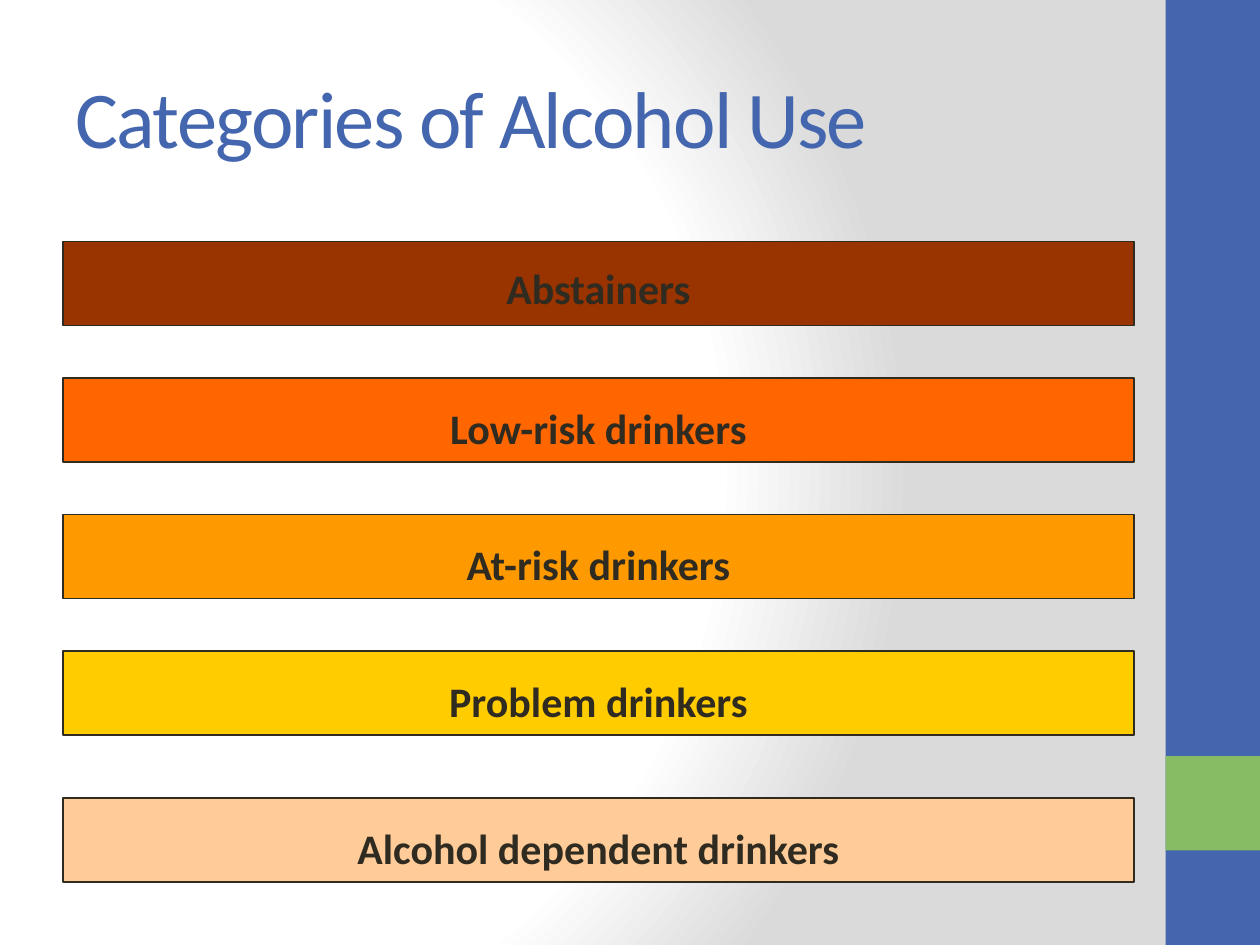
from lxml.etree import SubElement
from pptx import Presentation
from pptx.dml.color import RGBColor
from pptx.enum.shapes import MSO_SHAPE
from pptx.enum.text import MSO_ANCHOR, PP_ALIGN
from pptx.oxml.ns import qn
from pptx.util import Inches, Pt

HUES = {
    "blue": "4466AF", "green": "88BC64", "ink": "2F2B20",
    "white": "FFFFFF", "grey": "DADADA",
    "brown": "993300", "orange": "FF6600", "amber": "FF9900",
    "gold": "FFCC00", "peach": "FFCC99",
}
TITLE = {"name": "Calibri", "size": Pt(46), "bold": False}
LABEL = {"name": "Calibri", "size": Pt(24), "bold": True}
COLS, ROWS = 40, 90  # quarter-inch columns, twelfth-inch rows


class Page:
    def __init__(self, deck):
        self.slide = deck.slides.add_slide(deck.slide_layouts[5])
        self.col = deck.slide_width / COLS
        self.row = deck.slide_height / ROWS

    def hue(self, name):
        return RGBColor.from_string(HUES[name])

    def area(self, x, y, w, h):
        return [round(n) for n in
                (x * self.col, y * self.row, w * self.col, h * self.row)]

    def style(self, run, form, hue):
        for key, value in form.items():
            setattr(run.font, key, value)
        run.font.color.rgb = self.hue(hue)

    def label(self, frame, text, form, hue, align):
        frame.word_wrap = True
        frame.vertical_anchor = MSO_ANCHOR.MIDDLE
        para = frame.paragraphs[0]
        para.alignment = align
        run = para.add_run()
        run.text = text
        self.style(run, form, hue)
        return run

    def backdrop(self, stops, focus):
        fill = self.slide.background.fill
        fill.gradient()
        grad = self.slide.element.find(".//" + qn("a:gradFill"))
        for child in list(grad):
            grad.remove(child)
        group = SubElement(grad, qn("a:gsLst"))
        for place, hue in stops:
            stop = SubElement(group, qn("a:gs"), pos=str(place * 1000))
            SubElement(stop, qn("a:srgbClr"), val=HUES[hue])
        ring = SubElement(grad, qn("a:path"))
        ring.set("path", "circle")
        SubElement(ring, qn("a:fillToRect"),
                   {side: str(n * 1000) for side, n in focus.items()})

    def block(self, area, hue, edge=None):
        box = self.slide.shapes.add_shape(MSO_SHAPE.RECTANGLE, *self.area(*area))
        box.shadow.inherit = False
        box.fill.solid()
        box.fill.fore_color.rgb = self.hue(hue)
        if edge:
            box.line.color.rgb = self.hue(edge)
            box.line.width = Pt(0.75)
        else:
            box.line.fill.background()
        return box

    def bar(self, area, hue, text, drop):
        frame = self.block(area, hue, "ink").text_frame
        frame.margin_top, frame.margin_bottom = Inches(drop), 0
        self.label(frame, text, LABEL, "ink", PP_ALIGN.CENTER)

    def title(self, area, text):
        head = self.slide.shapes.title
        head.left, head.top, head.width, head.height = self.area(*area)
        run = self.label(head.text_frame, text, TITLE, "blue", PP_ALIGN.LEFT)
        run._r.get_or_add_rPr().set("spc", "-100")


def main():
    deck = Presentation()
    deck.slide_width, deck.slide_height = Inches(10), Inches(7.5)
    page = Page(deck)

    # Background and side band
    page.backdrop([(0, "white"), (75, "white"), (100, "grey")],
                  {"l": 20, "t": 50, "r": 100, "b": 50})
    page.block((37, 0, 3, ROWS), "blue")
    page.block((37, 72, 3, 9), "green")

    # Heading
    page.title((2, 3.6, 33.32, 15), "Categories of Alcohol Use")

    # Category bars: top row, colour, label, text drop
    bars = [
        (23, "brown", "Abstainers", 0.06),
        (36, "orange", "Low-risk drinkers", 0.12),
        (49, "amber", "At-risk drinkers", 0.12),
        (62, "gold", "Problem drinkers", 0.12),
        (76, "peach", "Alcohol dependent drinkers", 0.12),
    ]
    for top, hue, text, drop in bars:
        page.bar((2, top, 34, 8), hue, text, drop)

    deck.save("out.pptx")


if __name__ == "__main__":
    main()
